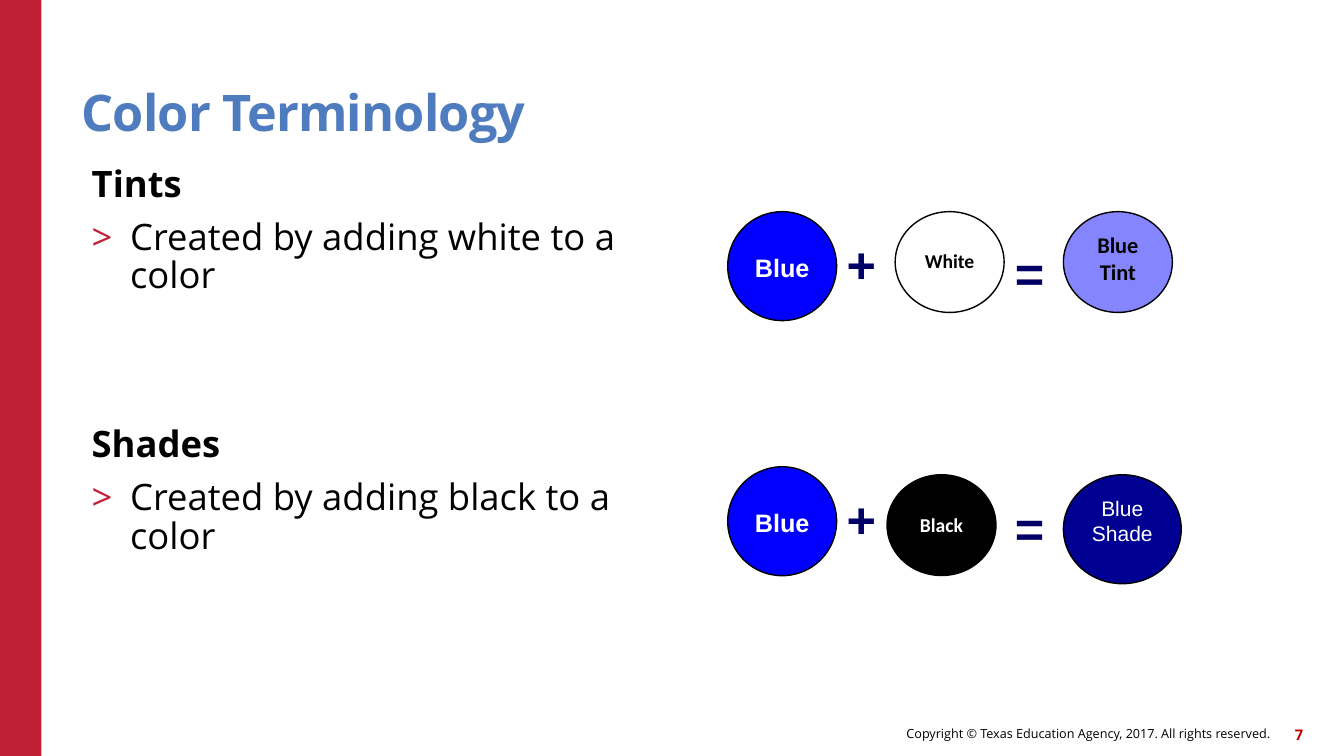
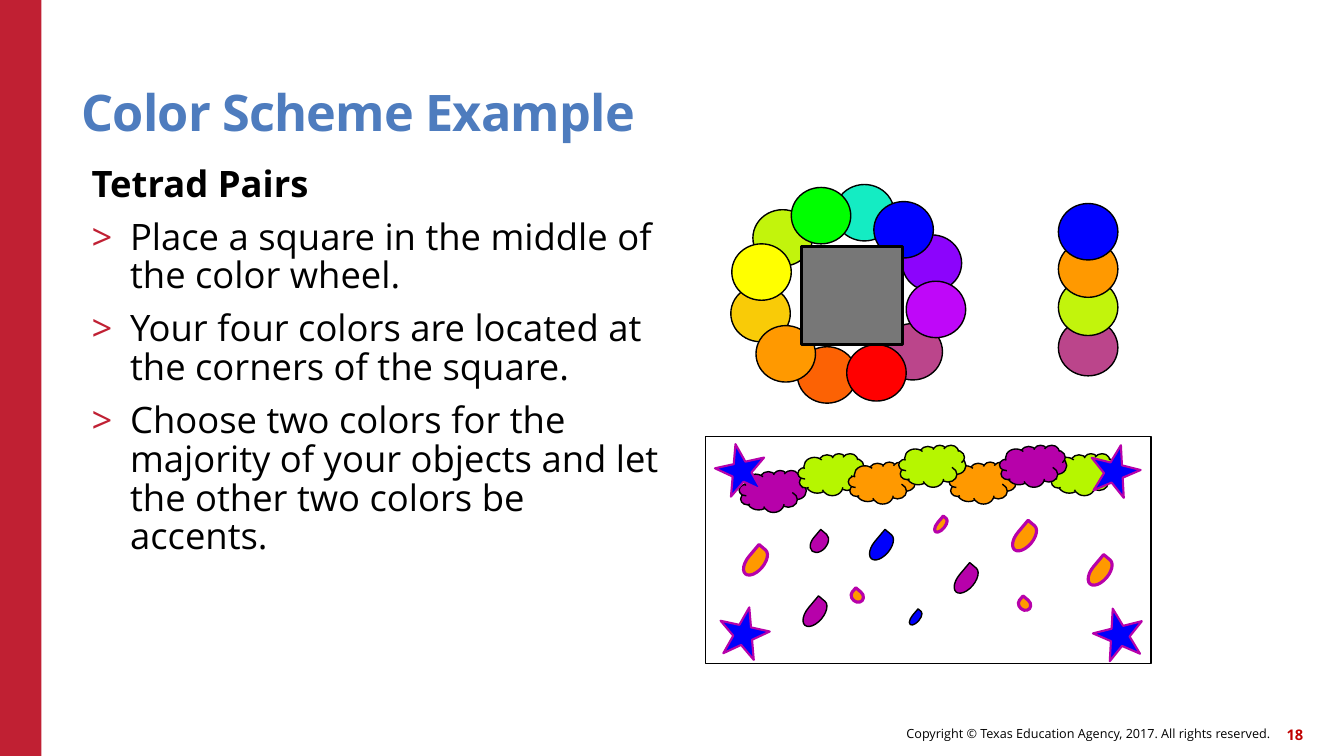
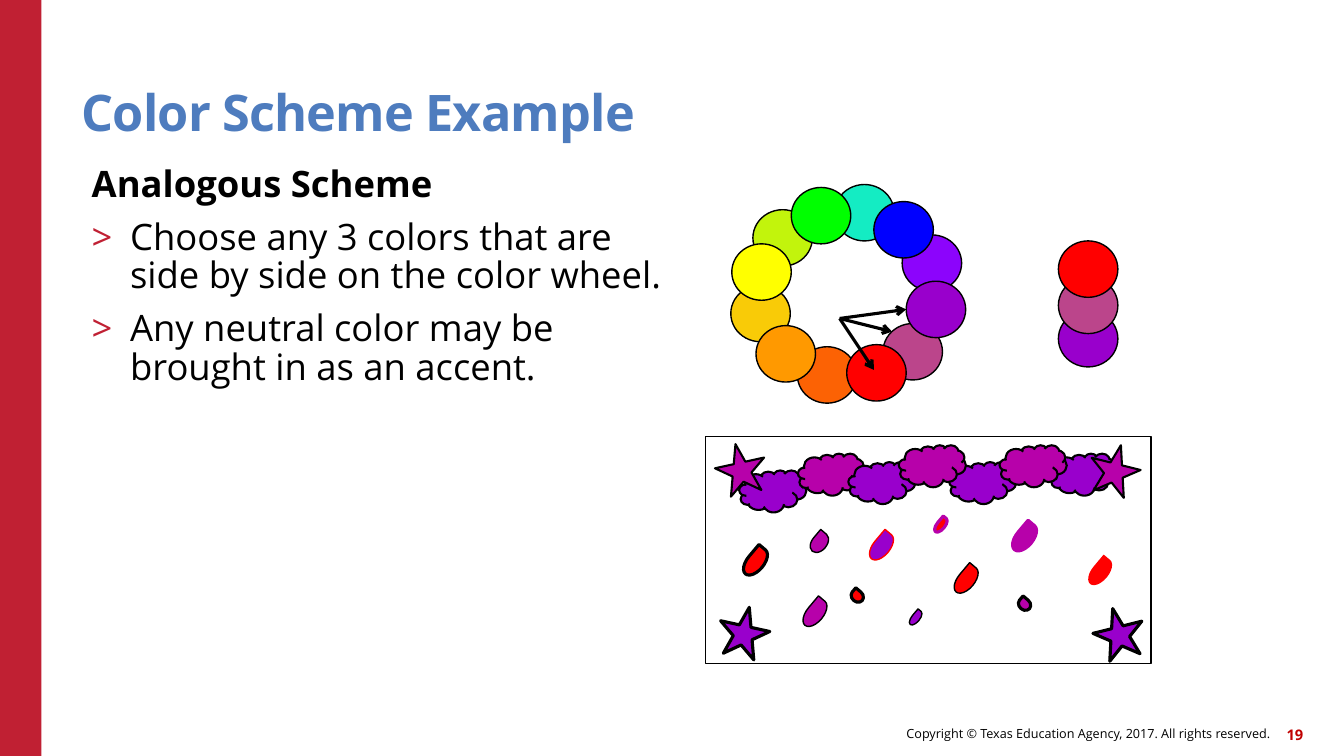
from lxml import etree
from pptx import Presentation
from pptx.dml.color import RGBColor
from pptx.enum.shapes import MSO_CONNECTOR, MSO_SHAPE as SHAPE
from pptx.enum.text import MSO_ANCHOR as ANCHOR, MSO_AUTO_SIZE, PP_ALIGN as ALIGN
from pptx.oxml.ns import qn
from pptx.util import Pt

COLORS = {
    "band": "C02033", "title": "4E7CBE", "number": "C00000", "sign": "000066",
    "black": "000000", "white": "FFFFFF", "gray": "777777",
    "blue": "0000FC", "tint": "8585FF", "shade": "000092",
    "pure blue": "0000FF", "aqua": "14ECC3", "green": "00FF00", "lime": "C2F40C",
    "yellow": "FFFF00", "gold": "F9CB07", "orange": "FF9900", "vermilion": "FC6204",
    "red": "FF0000", "rose": "BB458B", "orchid": "BF07F9", "violet": "8C04FC",
    "purple": "9900CC", "magenta": "B701AA", "leaf": "B6F600",
}
BODY_FONT = "Open Sans"


def draw(shapes, kind, box, fill, line="black", width=1, rotation=0):
    """Add a preset shape; box is left, top, width, height, and line None means no outline."""
    shape = shapes.add_shape(kind, *map(Pt, box))
    shape.shadow.inherit = False
    shape.rotation = rotation
    shape.fill.solid()
    shape.fill.fore_color.rgb = RGBColor.from_string(COLORS[fill])
    if line:
        shape.line.color.rgb = RGBColor.from_string(COLORS[line])
        shape.line.width = Pt(width)
    else:
        shape.line.fill.background()
    return shape


def write(paragraph, text, size, color="black", font=BODY_FONT, bold=False, align=ALIGN.LEFT):
    paragraph.alignment = align
    run = paragraph.add_run()
    run.text = text
    for attribute, value in {"name": font, "size": Pt(size), "bold": bold}.items():
        setattr(run.font, attribute, value)
    run.font.color.rgb = RGBColor.from_string(COLORS[color])
    return run


prs = Presentation()
prs.slide_width, prs.slide_height = Pt(960), Pt(540)
layout = prs.slide_layouts[1]
NO_INSETS = dict.fromkeys(("margin_left", "margin_top", "margin_right", "margin_bottom"), 0)
MIDDLE_FRAME = {**NO_INSETS, "word_wrap": True, "vertical_anchor": ANCHOR.MIDDLE}
TITLE_FRAME = {**NO_INSETS, "vertical_anchor": ANCHOR.BOTTOM, "auto_size": MSO_AUTO_SIZE.NONE}

# Titles and lists: each section is a heading, the space before it, and its points
pages = [
    ("Color Terminology", "7", [
        ("Tints", 0, ["Created by adding white to a color"]),
        ("Shades", 93, ["Created by adding black to a color"]),
    ]),
    ("Color Scheme Example", "18", [
        ("Tetrad Pairs", 0, [
            "Place a square in the middle of the color wheel.",
            "Your four colors are located at the corners of the square.",
            "Choose two colors for the majority of your objects and let the other two "
            "colors be accents.",
        ]),
    ]),
    ("Color Scheme Example", "19", [
        ("Analogous Scheme", 0, [
            "Choose any 3 colors that are side by side on the color wheel.",
            "Any neutral color may be brought in as an accent.",
        ]),
    ]),
]

slides = []
for title_text, number, sections in pages:
    slide = prs.slides.add_slide(layout)
    slides.append(slide)
    title, body = slide.placeholders
    for placeholder, box in ((title, (58.3, 32.4, 792, 69.1)), (body, (58.3, 111.6, 421.9, 373))):
        placeholder.left, placeholder.top, placeholder.width, placeholder.height = map(Pt, box)

    for attribute, value in TITLE_FRAME.items():
        setattr(title.text_frame, attribute, value)
    heading = title.text_frame.paragraphs[0]
    heading.line_spacing = 0.9
    run = write(heading, title_text, 36, "title", bold=True)
    run.font._element.set("spc", "-60")

    body.text_frame.auto_size = MSO_AUTO_SIZE.NONE
    lines = []
    for section, gap, points in sections:
        lines.append((section, gap, False))
        lines += [(point, 10, True) for point in points]
    for index, (text, gap, bulleted) in enumerate(lines):
        paragraph = body.text_frame.add_paragraph() if index else body.text_frame.paragraphs[0]
        props = paragraph._p.get_or_add_pPr()
        indent = Pt(27.4) if bulleted else 0
        props.set("marL", str(indent))
        props.set("indent", str(-indent))
        if bulleted:
            paragraph.level = 1
            bullet_color = etree.SubElement(props, qn("a:buClr"))
            etree.SubElement(bullet_color, qn("a:srgbClr"), val=COLORS["band"])
            etree.SubElement(props, qn("a:buFont"), typeface=BODY_FONT)
            etree.SubElement(props, qn("a:buChar"), char=">")
        else:
            etree.SubElement(props, qn("a:buNone"))
        paragraph.space_before = Pt(gap)
        paragraph.line_spacing = 0.89 if index else 1.0
        write(paragraph, text, 26, bold=not bulleted)

    page_number = slide.shapes.add_textbox(Pt(900.7), Pt(513.4), Pt(30.2), Pt(23))
    for attribute, value in MIDDLE_FRAME.items():
        setattr(page_number.text_frame, attribute, value)
    write(page_number.text_frame.paragraphs[0], number, 10.5, "number",
          bold=True, align=ALIGN.RIGHT)

# Band and copyright line go to the layout, so every slide shows them
terms, tetrad, analogous = slides
band = draw(terms.shapes, SHAPE.RECTANGLE, (0, 0, 29.5, 540), "band", None)
copyright_line = terms.shapes.add_textbox(Pt(442.1), Pt(512.6), Pt(465.1), Pt(23))
for attribute, value in MIDDLE_FRAME.items():
    setattr(copyright_line.text_frame, attribute, value)
write(copyright_line.text_frame.paragraphs[0],
      "Copyright © Texas Education Agency, 2017. All rights reserved.", 9, align=ALIGN.RIGHT)
for shape_id, part in enumerate((band, copyright_line), 20):
    part.element.nvSpPr.cNvPr.set("id", str(shape_id))
    layout.shapes.element.append(part.element)

# Color terminology: box, fill, text, size, font, text color, bold, top inset
discs = [
    ((633.6, 339.1, 77.8, 72), "black", "Black", 14, "Calibri", "white", True, 16.4),
    ((759.6, 339.1, 84.2, 77.8), "shade", "Blue Shade", 15, "Arial", "white", False, 3.6),
    ((639.4, 151.2, 77.8, 72), "white", "White", 14, "Calibri", "black", True, 16.4),
    ((759.6, 151.2, 77.8, 72), "tint", "Blue Tint", 16, "Calibri", "black", True, 3.6),
]
for row_top in (151.2, 333.4):
    discs.append(((519.8, row_top, 77.8, 77.8), "blue", "Blue", 18, "Arial", "white", True, 17.4))
    for sign, left, drop in (("+", 597.6, 12), ("=", 717.8, 18)):
        sign_box = terms.shapes.add_textbox(Pt(left), Pt(row_top + drop), Pt(48.2), Pt(51.1))
        sign_box.text_frame.word_wrap = True
        write(sign_box.text_frame.paragraphs[0], sign, 36, "sign", "Arial", True)
for box, fill, text, size, font, color, bold, inset in discs:
    frame = draw(terms.shapes, SHAPE.OVAL, box, fill).text_frame
    frame.vertical_anchor = ANCHOR.TOP
    frame.margin_top = Pt(inset)
    write(frame.paragraphs[0], text, size, color, font, bold, ALIGN.CENTER)

# Color schemes: places shared by both example slides
DISC = (42.5, 40.3)
wheel_places = [
    (569.5, 247.7, "vermilion"), (522, 203.8, "gold"), (537.8, 149.8, "lime"),
    (596.2, 131.8, "aqua"), (644.4, 167.8, "violet"), (630.7, 231.1, "rose"),
    (647.3, 200.9, None), (624.2, 144, "pure blue"), (565.2, 133.9, "green"),
    (522.7, 174.2, "yellow"), (604.8, 246.2, "red"), (540, 232.6, "orange"),
]
cloud_places = [(528, 336), (570, 324), (606, 330), (678, 330), (642, 318), (750, 324), (714, 318)]
star_places = [(513.4, 433.4, 12.3), (781.2, 434.2, 346), (511.2, 316.8, 347.7), (778.3, 317.5, 14)]
LARGE, MEDIUM, THIN, TINY = (22.3, 12.2), (15.8, 10.8), (12.2, 5.8), (7.9, 9.4)
drop_places = [
    (528.5, 395.3, *LARGE), (571, 432, *LARGE), (618.5, 384.5, *LARGE), (679, 408.2, *LARGE),
    (720.7, 378, *LARGE), (774.7, 402.5, *LARGE), (577.4, 382.3, *MEDIUM),
    (608.4, 421.2, *TINY), (648, 438.5, *THIN), (666, 372.2, *THIN), (727.9, 427, *TINY),
]

# Looks are fill, line, line width
orange_drop, magenta_drop = ("orange", "magenta", 2.25), ("magenta", "black", 1)
blue_drop, bold_red_drop = ("blue", "black", 1), ("red", "black", 2.25)
schemes = [
    {
        "slide": tetrad, "wheel accent": "orchid",
        "column": [(228.2, "rose"), (199.4, "lime"), (172.1, "orange"), (145.4, "pure blue")],
        "clouds": ["magenta", "leaf", "orange", "orange", "leaf", "leaf", "magenta"],
        "cloud line": 1,
        "stars": [("blue", "magenta", 1.5)] * 4,
        "drops": [orange_drop, magenta_drop, blue_drop, magenta_drop, orange_drop, orange_drop,
                  magenta_drop, orange_drop, blue_drop, orange_drop, orange_drop],
    },
    {
        "slide": analogous, "wheel accent": "purple",
        "column": [(221.8, "purple"), (198, "rose"), (172.1, "red")],
        "clouds": ["purple", "magenta", "purple", "purple", "magenta", "purple", "magenta"],
        "cloud line": 1.5,
        "stars": [("purple", "black", 2.25)] * 2 + [("magenta", "black", 1.5)] * 2,
        "drops": [bold_red_drop, magenta_drop, ("purple", "red", 1), ("red", "black", 1),
                  ("magenta", "magenta", 2.25), ("red", None, 0), magenta_drop, bold_red_drop,
                  ("purple", "black", 1), ("red", "magenta", 2.25), ("magenta", "black", 2.25)],
    },
]
for scheme in schemes:
    shapes = scheme["slide"].shapes
    wheel = shapes.add_group_shape()
    for left, top, color in wheel_places:
        draw(wheel.shapes, SHAPE.OVAL, (left, top, *DISC), color or scheme["wheel accent"])
    for top, color in scheme["column"]:
        draw(shapes, SHAPE.OVAL, (756, top, *DISC), color)
    draw(shapes, SHAPE.RECTANGLE, (504, 311.8, 318.2, 162), "white")
    for place, color in zip(cloud_places, scheme["clouds"]):
        draw(shapes, SHAPE.CLOUD, (*place, 48, 30), color, width=scheme["cloud line"])
    for (left, top, angle), look in zip(star_places, scheme["stars"]):
        draw(shapes, SHAPE.STAR_5_POINT, (left, top, 36, 36), *look, rotation=angle)
    for box, look in zip(drop_places, scheme["drops"]):
        draw(shapes, SHAPE.TEAR, box, *look, rotation=310)

draw(tetrad.shapes, SHAPE.RECTANGLE, (572.4, 176.4, 72, 69.8), "gray", width=2.25)

for tip in ((637.2, 236.9), (624.2, 264.2), (647.3, 221)):
    arrow = analogous.shapes.add_connector(MSO_CONNECTOR.STRAIGHT, *map(Pt, (599.8, 227.5, *tip)))
    arrow.line.color.rgb = RGBColor.from_string(COLORS["black"])
    arrow.line.width = Pt(2.25)
    etree.SubElement(arrow.line._get_or_add_ln(), qn("a:tailEnd"), type="arrow")
    etree.SubElement(arrow.element.spPr, qn("a:effectLst"))

prs.save("out.pptx")
